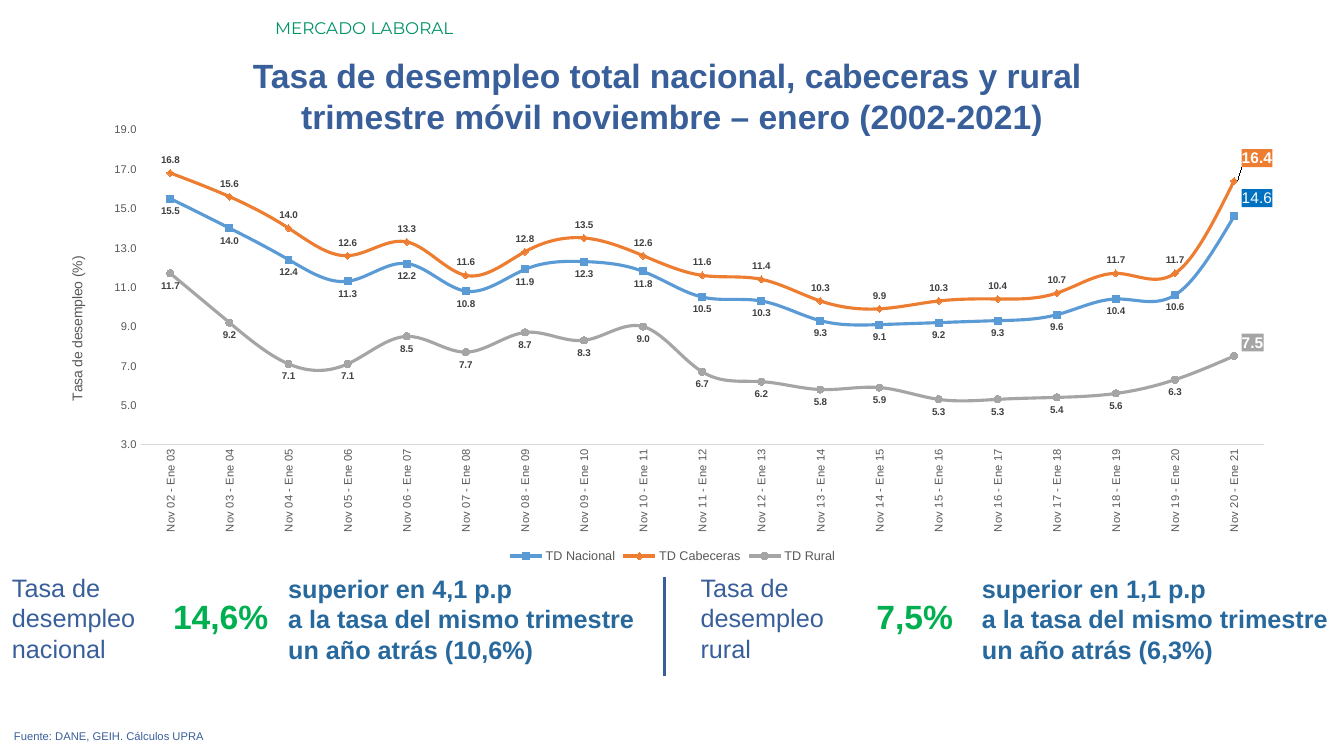
from dataclasses import dataclass

from lxml import etree
from pptx import Presentation
from pptx.chart.data import CategoryChartData
from pptx.dml.color import RGBColor
from pptx.enum.chart import (XL_CHART_TYPE, XL_LABEL_POSITION, XL_LEGEND_POSITION,
                             XL_MARKER_STYLE, XL_TICK_MARK)
from pptx.enum.shapes import MSO_CONNECTOR
from pptx.enum.text import PP_ALIGN
from pptx.oxml import parse_xml
from pptx.oxml.ns import nsdecls, qn
from pptx.util import Emu, Pt

LEFT, MID, RIGHT, FULL = PP_ALIGN.LEFT, PP_ALIGN.CENTER, PP_ALIGN.RIGHT, PP_ALIGN.JUSTIFY
ABOVE, BELOW, BESIDE = (XL_LABEL_POSITION.ABOVE, XL_LABEL_POSITION.BELOW,
                        XL_LABEL_POSITION.RIGHT)
SQUARE, GEM, DISC = (XL_MARKER_STYLE.SQUARE, XL_MARKER_STYLE.DIAMOND,
                     XL_MARKER_STYLE.CIRCLE)
NO_TICK = XL_TICK_MARK.NONE
LINES = XL_CHART_TYPE.LINE_MARKERS
BOTTOM = XL_LEGEND_POSITION.BOTTOM
STRAIGHT = MSO_CONNECTOR.STRAIGHT

SCALE = 9144
NAVY, STEEL, GREEN, GREY, WHITE = "395F9B", "27689D", "00B050", "595959", "FFFFFF"
FACE = "Arial"
FORMAT = "#,##0.0"
UPWARD = "-5400000"


@dataclass
class Trend:
    name: str
    tint: str
    mark: XL_MARKER_STYLE
    side: XL_LABEL_POSITION
    tag: str
    bold: bool
    shift: tuple[float, float]
    rates: list[float]


@dataclass
class Panel:
    topic: list[str]
    topic_box: tuple[int, int, int, int]
    rate: str
    rate_box: tuple[int, int, int, int]
    change: list[str]
    change_box: tuple[int, int, int, int]


TRENDS = [
    Trend("TD Nacional", "5B9BD5", SQUARE, BELOW, "0070C0", False, (0, -0.04),
          [15.5, 14, 12.4, 11.3, 12.2, 10.8, 11.9, 12.3, 11.8, 10.5,
           10.3, 9.3, 9.1, 9.2, 9.3, 9.6, 10.4, 10.6, 14.6]),
    Trend("TD Cabeceras", "ED7D31", GEM, ABOVE, "ED7D31", True, (0, -0.05),
          [16.8, 15.6, 14, 12.6, 13.3, 11.6, 12.8, 13.5, 12.6, 11.6,
           11.4, 10.3, 9.9, 10.3, 10.4, 10.7, 11.7, 11.7, 16.4]),
    Trend("TD Rural", "A5A5A5", DISC, BELOW, "A5A5A5", True, (0, -0.03),
          [11.7, 9.2, 7.1, 7.1, 8.5, 7.7, 8.7, 8.3, 9, 6.7,
           6.2, 5.8, 5.9, 5.3, 5.3, 5.4, 5.6, 6.3, 7.5]),
]

PANELS = [
    Panel(["Tasa de desempleo nacional"], (2, 563, 222, 101),
          "14,6%", (156, 586, 120, 50),
          ["superior en 4,1 p.p", "a la tasa del mismo trimestre un año atrás (10,6%)"],
          (276, 564, 379, 101)),
    Panel(["Tasa de desempleo", "rural"], (685, 563, 174, 101),
          "7,5%", (810, 586, 145, 50),
          ["superior en 1,1 p.p", "a la tasa del mismo trimestre un año atrás (6,3%)"],
          (964, 564, 369, 101)),
]


def px(count: int) -> Emu:
    return Emu(count * SCALE)


def tint(code: str) -> RGBColor:
    return RGBColor.from_string(code)


def style(font, size: float, code: str, bold: bool = False, face: str = FACE) -> None:
    font.size, font.bold, font.name = Pt(size), bold, face
    font.color.rgb = tint(code)


def write(slide, lines: list[str], box: tuple[int, int, int, int], *, size: float,
          code: str = NAVY, bold: bool = False, face: str = FACE,
          align: PP_ALIGN = LEFT) -> None:
    frame = slide.shapes.add_textbox(*map(px, box)).text_frame
    frame.word_wrap = True
    for at, line in enumerate(lines):
        para = frame.add_paragraph() if at else frame.paragraphs[0]
        para.alignment = align
        run = para.add_run()
        run.text = line
        style(run.font, size, code, bold, face)


def layout(parts: dict[str, str | float]):
    body = "".join(f'<c:{key} val="{val}"/>' for key, val in parts.items())
    return parse_xml(f'<c:layout {nsdecls("c")}><c:manualLayout>{body}'
                     '</c:manualLayout></c:layout>')


def place(node, spot: int, parts: dict[str, str | float]) -> None:
    for old in node.findall(qn("c:layout")):
        node.remove(old)
    node.insert(spot, layout(parts))


def draw_trend(line, trend: Trend) -> None:
    line.smooth = True
    line.format.line.width = Pt(2.25)
    line.format.line.color.rgb = tint(trend.tint)
    line.marker.style, line.marker.size = trend.mark, 5
    fill = line.marker.format.fill
    fill.solid()
    fill.fore_color.rgb = tint(trend.tint)
    line.marker.format.line.color.rgb = tint(trend.tint)

    labels = line.data_labels
    labels.show_value = True
    labels.position = trend.side
    labels.number_format, labels.number_format_is_linked = FORMAT, False
    style(labels.font, 7, "404040", True)

    last = len(trend.rates) - 1
    label = line.points[last].data_label
    style(label.font, 11, WHITE, trend.bold)
    label.position = BESIDE
    node = line._element.xpath(f'.//c:dLbl[c:idx/@val="{last}"]')[0]
    place(node, 1, dict(zip("xy", trend.shift)))
    node.find(qn("c:txPr")).addprevious(parse_xml(
        f'<c:spPr {nsdecls("c", "a")}><a:solidFill><a:srgbClr val="{trend.tag}"/>'
        '</a:solidFill></c:spPr>'))


def draw_chart(slide) -> None:
    data = CategoryChartData(number_format=FORMAT)
    data.categories = [f"Nov {year:02} - Ene {year + 1:02}" for year in range(2, 21)]
    for trend in TRENDS:
        data.add_series(trend.name, trend.rates)
    box = map(px, (65, 112, 1204, 451))
    chart = slide.shapes.add_chart(LINES, *box, data).chart
    chart.has_title = False
    style(chart.font, 10, "000000")
    chart.has_legend = True
    chart.legend.position = BOTTOM
    chart.legend.include_in_layout = False
    style(chart.legend.font, 9, GREY)

    base, scale = chart.category_axis, chart.value_axis
    for axis in (base, scale):
        axis.major_tick_mark = axis.minor_tick_mark = NO_TICK
        axis.has_major_gridlines = False
        style(axis.tick_labels.font, 8, GREY)
    base.format.line.color.rgb = tint("D9D9D9")
    base.format.line.width = Pt(0.75)
    base._element.find(qn("c:txPr")).find(qn("a:bodyPr")).set("rot", UPWARD)
    scale.format.line.fill.background()
    scale.minimum_scale, scale.maximum_scale, scale.major_unit = 3, 19, 2
    scale.tick_labels.number_format = FORMAT
    scale.tick_labels.number_format_is_linked = False

    title = scale.axis_title
    frame = title.text_frame
    run = frame.paragraphs[0].add_run()
    run.text = "Tasa de desempleo (%)"
    style(run.font, 10, GREY)
    body = frame._txBody.find(qn("a:bodyPr"))
    body.set("rot", UPWARD)
    body.set("vert", "horz")
    place(title._element, 1, {"xMode": "edge", "yMode": "edge", "x": 0, "y": 0.31})

    plot = chart._chartSpace.find(".//" + qn("c:plotArea"))
    place(plot, 0, {"layoutTarget": "inner", "xMode": "edge", "yMode": "edge",
                    "x": 0.062, "y": 0.037, "w": 0.925, "h": 0.693})
    for line, trend in zip(chart.plots[0].series, TRENDS):
        draw_trend(line, trend)


def main() -> None:
    deck = Presentation()
    deck.slide_width, deck.slide_height = px(1333), px(750)
    slide = deck.slides.add_slide(deck.slide_layouts[6])
    write(slide, ["MERCADO LABORAL"], (263, 13, 1070, 30), size=12, code="009267",
          face="Montserrat")
    write(slide, ["Tasa de desempleo total nacional, cabeceras y rural ",
                  "trimestre móvil noviembre – enero (2002-2021)"],
          (0, 50, 1333, 91), size=24, bold=True, align=MID)
    for panel in PANELS:
        write(slide, panel.topic, panel.topic_box, size=18)
        write(slide, [panel.rate], panel.rate_box, size=24, code=GREEN, bold=True,
              align=RIGHT)
        write(slide, panel.change, panel.change_box, size=18, code=STEEL, bold=True)
    rule = slide.shapes.add_connector(STRAIGHT, *map(px, (659, 572, 659, 671)))
    rule.line.color.rgb = tint(NAVY)
    rule.line.width = Pt(2.25)
    etree.SubElement(rule._element.spPr, qn("a:effectLst"))
    write(slide, ["Fuente: DANE, GEIH. Cálculos UPRA"], (4, 719, 1291, 24), size=8,
          align=FULL)
    draw_chart(slide)
    deck.save("out.pptx")


if __name__ == "__main__":
    main()
